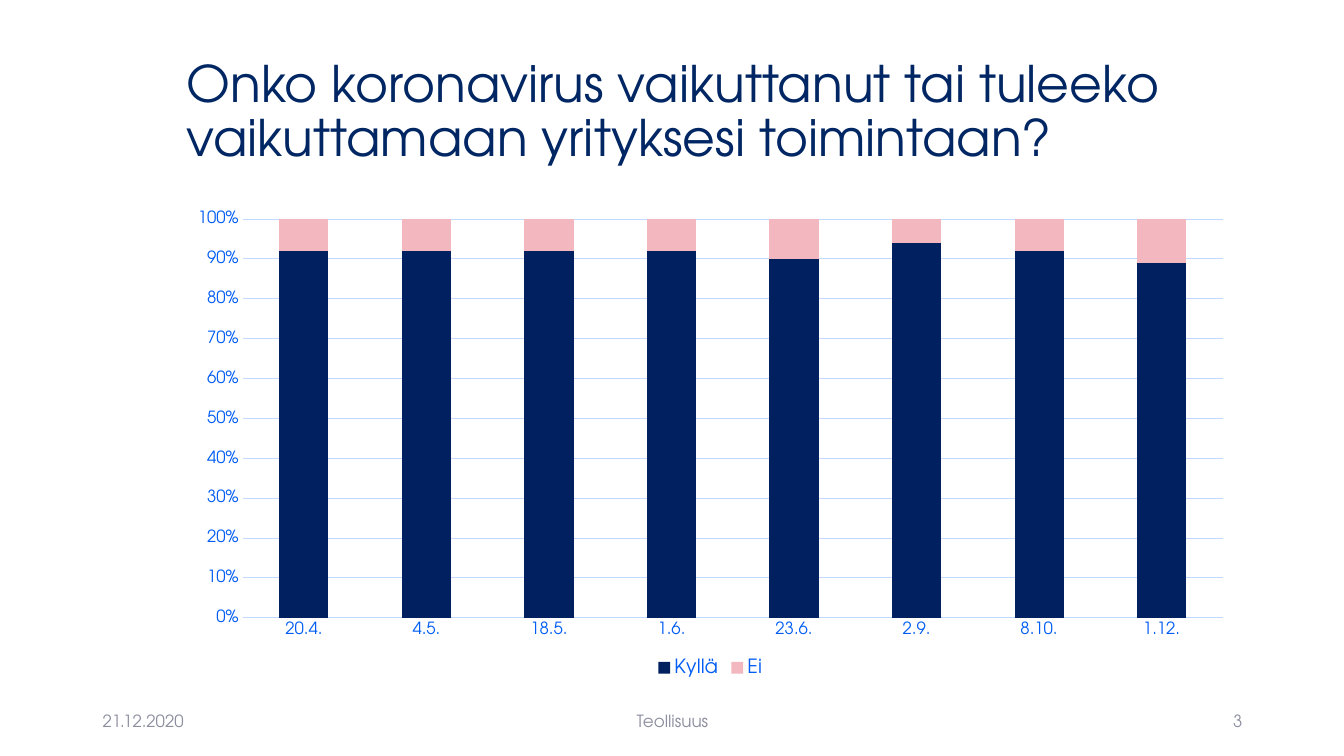
from dataclasses import dataclass

from pptx import Presentation
from pptx.chart.data import CategoryChartData
from pptx.dml.color import RGBColor
from pptx.enum.chart import XL_CHART_TYPE as ChartType
from pptx.enum.chart import XL_LEGEND_POSITION as LegendPosition
from pptx.enum.chart import XL_TICK_MARK as TickMark
from pptx.enum.text import MSO_ANCHOR as Anchor
from pptx.enum.text import PP_ALIGN as Align
from pptx.util import Inches, Pt


@dataclass(frozen=True)
class Theme:
    face: str = "TeX Gyre Adventor"
    title: str = "002663"
    muted: str = "8C8E9F"
    label: str = "005DF3"
    grid: str = "C1D9FF"
    yes: str = "002060"
    no: str = "F2B7BF"
    title_size: int = 36
    legend_size: int = 14
    small_size: int = 12


THEME = Theme()
DATES = ["20.4.", "4.5.", "18.5.", "1.6.", "23.6.", "2.9.", "8.10.", "1.12."]
YES_SHARES = [92, 92, 92, 92, 90, 94, 92, 89]


def style_font(font, size, color):
    font.name = THEME.face
    font.size = Pt(size)
    font.bold = False
    font.color.rgb = RGBColor.from_string(color)


def style_line(line, color):
    line.color.rgb = RGBColor.from_string(color)
    line.width = Pt(0.75)


def add_title(page, left, top, width, height):
    title = page.shapes.title
    title.left, title.top = Inches(left), Inches(top)
    title.width, title.height = Inches(width), Inches(height)
    frame = title.text_frame
    frame.text = "Onko koronavirus vaikuttanut tai tuleeko vaikuttamaan yrityksesi toimintaan?"
    frame.word_wrap = True
    frame.vertical_anchor = Anchor.MIDDLE
    para = frame.paragraphs[0]
    para.alignment = Align.LEFT
    para.line_spacing = 0.9
    style_font(para.font, THEME.title_size, THEME.title)


def add_chart(page, left, top, width, height):
    data = CategoryChartData()
    data.categories = DATES
    data.add_series("Kyllä", YES_SHARES)
    data.add_series("Ei", [100 - share for share in YES_SHARES])
    chart = page.shapes.add_chart(
        ChartType.COLUMN_STACKED_100,
        Inches(left), Inches(top), Inches(width), Inches(height), data,
    ).chart
    chart.has_title = False
    style_font(chart.font, THEME.small_size, THEME.label)

    plot = chart.plots[0]
    plot.gap_width = 150
    plot.overlap = 100
    plot.vary_by_categories = False
    for series, color in zip(plot.series, (THEME.yes, THEME.no)):
        series.format.fill.solid()
        series.format.fill.fore_color.rgb = RGBColor.from_string(color)

    for axis in (chart.category_axis, chart.value_axis):
        axis.major_tick_mark = TickMark.NONE
        axis.minor_tick_mark = TickMark.NONE
        style_font(axis.tick_labels.font, THEME.small_size, THEME.label)
    style_line(chart.category_axis.format.line, THEME.grid)

    values = chart.value_axis
    values.format.line.fill.background()
    values.has_major_gridlines = True
    style_line(values.major_gridlines.format.line, THEME.grid)
    values.tick_labels.number_format = "0%"
    values.tick_labels.number_format_is_linked = False

    chart.has_legend = True
    chart.legend.position = LegendPosition.BOTTOM
    chart.legend.include_in_layout = False
    style_font(chart.legend.font, THEME.legend_size, THEME.label)


def add_footer(page, left, top, width, height):
    side, middle = 3, 4.5
    items = [
        ("21.12.2020", left, side, Align.LEFT),
        ("Teollisuus", left + (width - middle) / 2, middle, Align.CENTER),
        ("3", left + width - side, side, Align.RIGHT),
    ]
    for text, start, span, alignment in items:
        box = page.shapes.add_textbox(
            Inches(start), Inches(top), Inches(span), Inches(height)
        )
        frame = box.text_frame
        frame.text = text
        frame.word_wrap = True
        frame.vertical_anchor = Anchor.MIDDLE
        para = frame.paragraphs[0]
        para.alignment = alignment
        style_font(para.font, THEME.small_size, THEME.muted)


def main():
    deck = Presentation()
    deck.slide_width, deck.slide_height = Inches(13.33), Inches(7.5)
    page = deck.slides.add_slide(deck.slide_layouts[5])
    add_title(page, 1.75, 0.4, 10.59, 1.45)
    add_chart(page, 1.75, 2, 10.59, 4.76)
    add_footer(page, 0.92, 6.95, 11.5, 0.4)
    deck.save("out.pptx")


if __name__ == "__main__":
    main()
